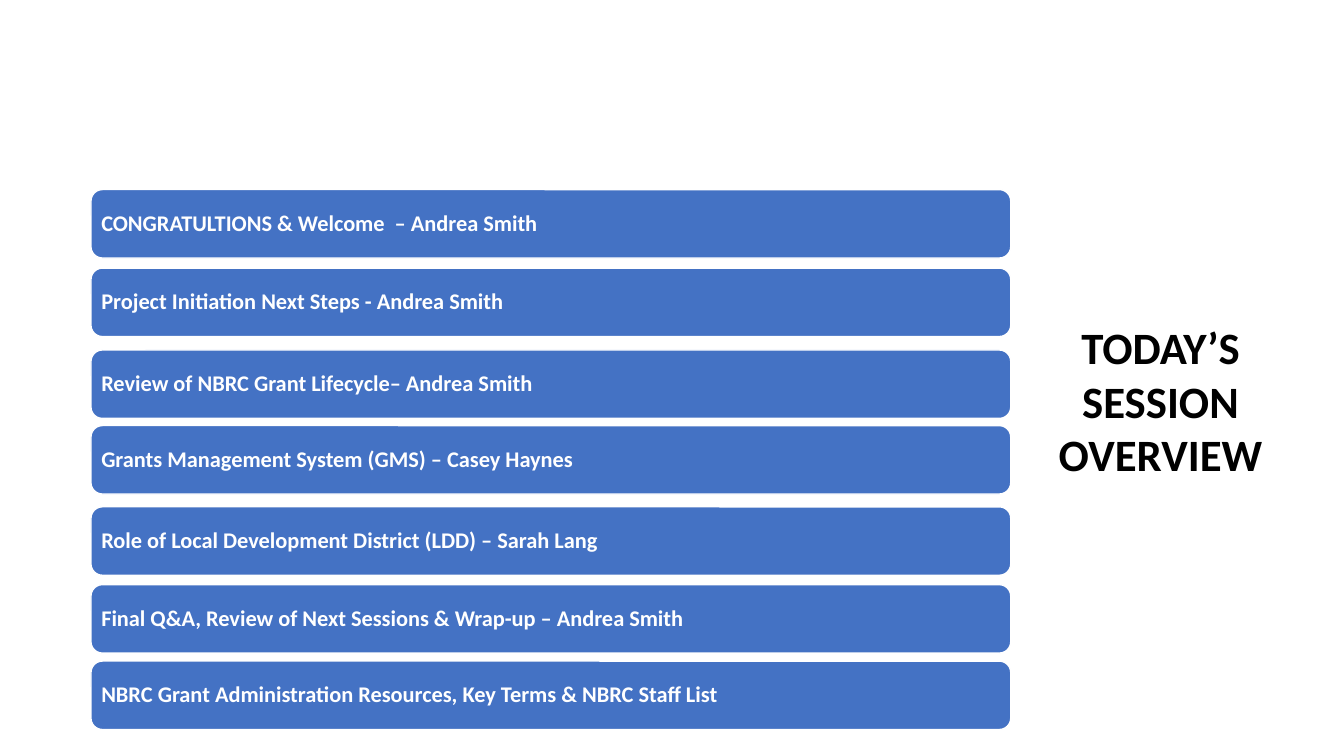
from pptx import Presentation
from pptx.dml.color import RGBColor
from pptx.enum.shapes import MSO_SHAPE
from pptx.enum.text import MSO_ANCHOR, MSO_AUTO_SIZE, PP_ALIGN
from pptx.util import Pt

ROUNDED = MSO_SHAPE.ROUNDED_RECTANGLE
MIDDLE, TOP = MSO_ANCHOR.MIDDLE, MSO_ANCHOR.TOP
GROW = MSO_AUTO_SIZE.SHAPE_TO_FIT_TEXT
LEFT, CENTER = PP_ALIGN.LEFT, PP_ALIGN.CENTER

BLUE = RGBColor(0x44, 0x72, 0xC4)
WHITE = RGBColor(0xFF, 0xFF, 0xFF)
BLACK = RGBColor(0x00, 0x00, 0x00)

TITLE_ONLY = 5
BAR_LEFT, BAR_WIDTH, BAR_HEIGHT = 65, 657, 48.9

AGENDA = [
    (135.4, "CONGRATULTIONS & Welcome  – Andrea Smith"),
    (191.5, "Project Initiation Next Steps - Andrea Smith"),
    (250, "Review of NBRC Grant Lifecycle– Andrea Smith"),
    (304, "Grants Management System (GMS) – Casey Haynes"),
    (362, "Role of Local Development District (LDD) – Sarah Lang"),
    (417.6, "Final Q&A, Review of Next Sessions & Wrap-up – Andrea Smith"),
    (472.2, "NBRC Grant Administration Resources, Key Terms & NBRC Staff List"),
]

BAR_FRAME = {
    "word_wrap": True,
    "vertical_anchor": MIDDLE,
    "margin_left": Pt(5),
    "margin_top": Pt(5),
    "margin_right": Pt(5),
    "margin_bottom": Pt(5),
}
TITLE_FRAME = {"word_wrap": True, "vertical_anchor": TOP, "auto_size": GROW}
BAR_PARAGRAPH = {"alignment": LEFT, "line_spacing": 0.9}
TITLE_PARAGRAPH = {"alignment": CENTER, "line_spacing": 1.0}


def set_attributes(target, values):
    for name, value in values.items():
        setattr(target, name, value)


def write_text(shape, text, size, color, frame_format, paragraph_format):
    frame = shape.text_frame
    frame.text = text
    set_attributes(frame, frame_format)
    paragraph = frame.paragraphs[0]
    set_attributes(paragraph, paragraph_format)
    font = paragraph.runs[0].font
    set_attributes(font, {"name": "Calibri", "size": Pt(size), "bold": True})
    font.color.rgb = color


def add_agenda_bar(slide, top, text):
    bar = slide.shapes.add_shape(
        ROUNDED, Pt(BAR_LEFT), Pt(top), Pt(BAR_WIDTH), Pt(BAR_HEIGHT)
    )
    bar.shadow.inherit = False
    bar.fill.solid()
    bar.fill.fore_color.rgb = BLUE
    bar.line.color.rgb = WHITE
    bar.line.width = Pt(1)
    write_text(bar, text, 16, WHITE, BAR_FRAME, BAR_PARAGRAPH)


def place_title(slide, text):
    title = slide.shapes.title
    set_attributes(
        title,
        {"left": Pt(730), "top": Pt(224.6), "width": Pt(198), "height": Pt(124)},
    )
    write_text(title, text, 32, BLACK, TITLE_FRAME, TITLE_PARAGRAPH)


def main():
    presentation = Presentation()
    presentation.slide_width = Pt(960)
    presentation.slide_height = Pt(540)
    slide = presentation.slides.add_slide(presentation.slide_layouts[TITLE_ONLY])
    place_title(slide, "TODAY’S SESSION OVERVIEW")
    for top, text in AGENDA:
        add_agenda_bar(slide, top, text)
    presentation.save("out.pptx")


if __name__ == "__main__":
    main()
